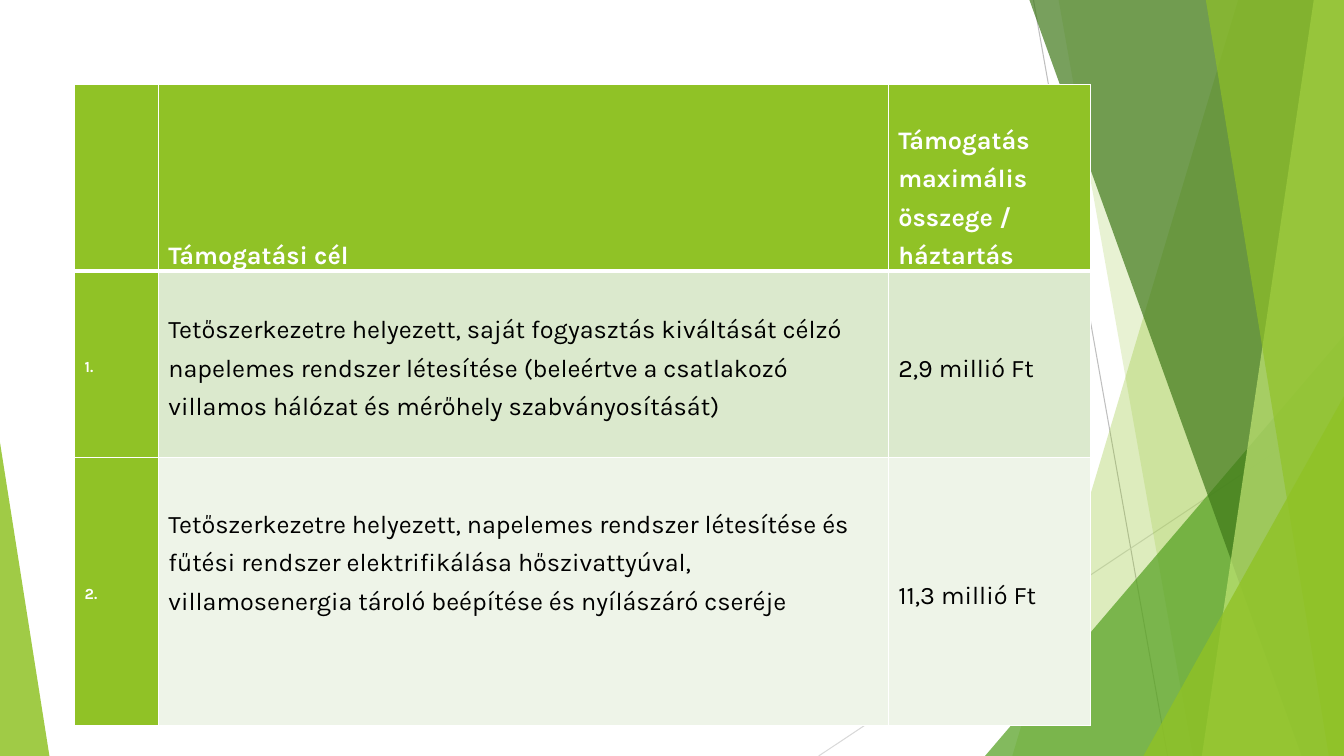
from dataclasses import dataclass

from lxml import etree
from pptx import Presentation
from pptx.dml.color import RGBColor
from pptx.enum.shapes import MSO_CONNECTOR, MSO_SHAPE
from pptx.enum.text import MSO_ANCHOR
from pptx.oxml.ns import qn
from pptx.util import Emu, Pt

STRAIGHT = MSO_CONNECTOR.STRAIGHT
TRIANGLE = MSO_SHAPE.RIGHT_TRIANGLE.ISOSCELES_TRIANGLE
BOTTOM, MIDDLE = MSO_ANCHOR.BOTTOM, MSO_ANCHOR.MIDDLE
EMU_PER_PX = 9144  # 100 px to the inch
SLIDE_WIDTH, SLIDE_HEIGHT = 1333, 750
BLANK_LAYOUT = 6


@dataclass(frozen=True)
class Theme:
    font: str = "Karla"
    body_size: int = 18
    number_size: int = 11
    white: str = "FFFFFF"
    black: str = "000000"
    lime: str = "90C226"
    pale_lime: str = "C0E474"
    green: str = "54A021"
    dark_green: str = "3F7819"
    odd_row: str = "DBE9CD"
    even_row: str = "EEF4E8"
    line_dark: str = "BFBFBF"
    line_light: str = "D9D9D9"


THEME = Theme()


@dataclass(frozen=True)
class Ray:
    start: tuple[int, int]
    end: tuple[int, int]
    color: str


@dataclass(frozen=True)
class Facet:
    """A full-height band reaching the right edge of the slide."""
    top_left: int
    bottom_left: int
    color: str
    opacity: int


@dataclass(frozen=True)
class Corner:
    """A triangle standing on the bottom edge of the slide."""
    left: int
    top: int
    width: int
    apex: float
    color: str
    opacity: int


@dataclass(frozen=True)
class CellStyle:
    fill: str
    color: str
    size: int
    bold: bool
    anchor: MSO_ANCHOR = MIDDLE
    space_before: int = 10
    bottom_border: int = 1
    bottom_margin: int = 0


RAYS = [
    Ray((1025, 0), (1158, 750), THEME.line_dark),
    Ray((1333, 403), (812, 750), THEME.line_light),
]
DECORATIONS = [
    Facet(1228, 1004, THEME.lime, 30),
    Facet(1050, 1183, THEME.lime, 20),
    Corner(977, 333, 356, 1, THEME.green, 72),
    Facet(1021, 1291, THEME.dark_green, 70),
    Facet(1303, 1192, THEME.pale_lime, 70),
    Facet(1196, 1318, THEME.lime, 65),
    Corner(1134, 393, 199, 1, THEME.lime, 80),
    Corner(0, 439, 49, 0, THEME.lime, 85),
]

TABLE_LEFT, TABLE_TOP = 74, 84
COLUMN_WIDTHS = [83, 724, 201]
ROW_HEIGHTS = [185, 185, 266]
HEADER = CellStyle(THEME.lime, THEME.white, THEME.body_size, True, BOTTOM, 24, 3)
NUMBER = CellStyle(THEME.lime, THEME.white, THEME.number_size, True)
ODD = CellStyle(THEME.odd_row, THEME.black, THEME.body_size, False)
EVEN = CellStyle(THEME.even_row, THEME.black, THEME.body_size, False)
EVEN_RAISED = CellStyle(THEME.even_row, THEME.black, THEME.body_size, False, bottom_margin=65)
TABLE_ROWS = [
    [("", HEADER), ("Támogatási cél", HEADER),
     ("Támogatás maximális összege / háztartás", HEADER)],
    [("1.", NUMBER),
     ("Tetőszerkezetre helyezett, saját fogyasztás kiváltását célzó napelemes rendszer "
      "létesítése (beleértve a csatlakozó villamos hálózat és mérőhely szabványosítását)", ODD),
     ("2,9 millió Ft", ODD)],
    [("2.", NUMBER),
     ("Tetőszerkezetre helyezett, napelemes rendszer létesítése és fűtési rendszer "
      "elektrifikálása hőszivattyúval, villamosenergia tároló beépítése és nyílászáró "
      "cseréje", EVEN_RAISED),
     ("11,3 millió Ft", EVEN)],
]


def px(length: int) -> Emu:
    return Emu(length * EMU_PER_PX)


def rgb(color: str) -> RGBColor:
    return RGBColor.from_string(color)


def draw_ray(slide, ray: Ray) -> None:
    connector = slide.shapes.add_connector(
        STRAIGHT, *(px(value) for value in ray.start + ray.end))
    connector.line.color.rgb = rgb(ray.color)
    connector.line.width = Pt(0.75)
    etree.SubElement(connector._element.spPr, qn("a:effectLst"))


def draw_decoration(slide, part: Facet | Corner) -> None:
    if isinstance(part, Facet):
        builder = slide.shapes.build_freeform(part.top_left, 0, scale=EMU_PER_PX)
        builder.add_line_segments([(SLIDE_WIDTH, 0), (SLIDE_WIDTH, SLIDE_HEIGHT),
                                   (part.bottom_left, SLIDE_HEIGHT)])
        shape = builder.convert_to_shape()
    else:
        shape = slide.shapes.add_shape(TRIANGLE, px(part.left), px(part.top),
                                       px(part.width), px(SLIDE_HEIGHT - part.top))
        shape.adjustments[0] = part.apex
    shape.shadow.inherit = False
    shape.line.fill.background()
    shape.fill.solid()
    shape.fill.fore_color.rgb = rgb(part.color)
    color_element = shape._element.spPr.find(qn("a:solidFill"))[0]
    etree.SubElement(color_element, qn("a:alpha"), val=str(part.opacity * 1000))


def set_borders(cell, bottom_width: int) -> None:
    properties = cell._tc.get_or_add_tcPr()
    widths = {"a:lnL": 1, "a:lnR": 1, "a:lnT": 1, "a:lnB": bottom_width}
    for index, (side, width) in enumerate(widths.items()):
        border = etree.Element(qn(side), w=str(Pt(width)))
        fill = etree.SubElement(border, qn("a:solidFill"))
        etree.SubElement(fill, qn("a:srgbClr"), val=THEME.white)
        properties.insert(index, border)


def fill_cell(cell, text: str, style: CellStyle) -> None:
    cell.fill.solid()
    cell.fill.fore_color.rgb = rgb(style.fill)
    set_borders(cell, style.bottom_border)
    cell.vertical_anchor = style.anchor
    cell.margin_left, cell.margin_right = px(10), px(30)
    cell.margin_top, cell.margin_bottom = px(0), px(style.bottom_margin)
    if not text:
        return
    cell.text = text
    paragraph = cell.text_frame.paragraphs[0]
    paragraph.line_spacing = 1.3
    paragraph.space_before, paragraph.space_after = Pt(style.space_before), Pt(10)
    paragraph.font.name = THEME.font
    paragraph.font.size = Pt(style.size)
    paragraph.font.bold = style.bold
    paragraph.font.color.rgb = rgb(style.color)


def draw_table(slide) -> None:
    table = slide.shapes.add_table(
        len(ROW_HEIGHTS), len(COLUMN_WIDTHS), px(TABLE_LEFT), px(TABLE_TOP),
        px(sum(COLUMN_WIDTHS)), px(sum(ROW_HEIGHTS))).table
    for column, width in zip(table.columns, COLUMN_WIDTHS):
        column.width = px(width)
    for row, height, contents in zip(table.rows, ROW_HEIGHTS, TABLE_ROWS):
        row.height = px(height)
        for cell, (text, style) in zip(row.cells, contents):
            fill_cell(cell, text, style)


def main() -> None:
    presentation = Presentation()
    presentation.slide_width = px(SLIDE_WIDTH)
    presentation.slide_height = px(SLIDE_HEIGHT)
    slide = presentation.slides.add_slide(presentation.slide_layouts[BLANK_LAYOUT])
    # Background facets, from back to front
    for ray in RAYS:
        draw_ray(slide, ray)
    for part in DECORATIONS:
        draw_decoration(slide, part)
    # Grant table
    draw_table(slide)
    presentation.save("out.pptx")


if __name__ == "__main__":
    main()
